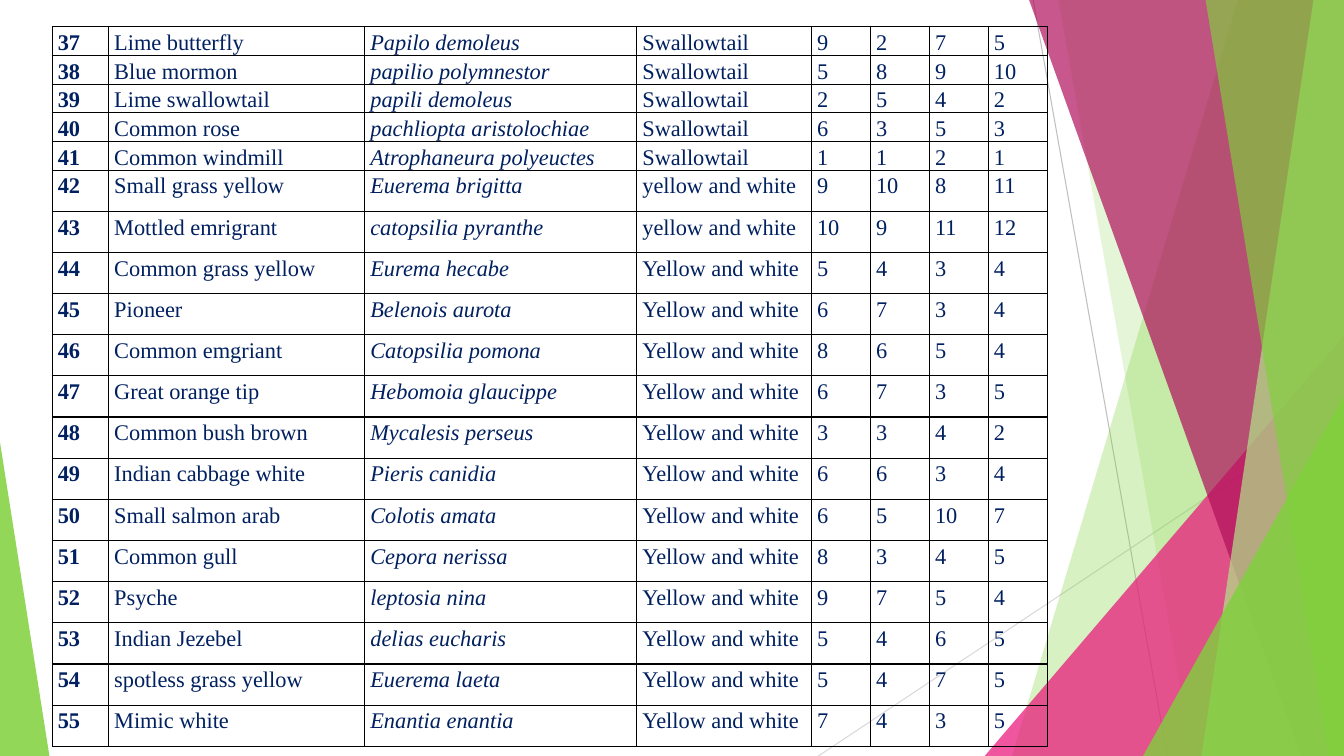
from lxml.etree import SubElement
from pptx import Presentation
from pptx.dml.color import RGBColor
from pptx.enum.shapes import MSO_CONNECTOR, MSO_SHAPE
from pptx.oxml import parse_xml
from pptx.oxml.ns import nsdecls, qn
from pptx.util import Pt

PAGE = (0, 0, 960, 540)
GRID = (37.3, 19.2, 711, 514)
WIDTHS = [40.3, 183, 194.3, 124.8] + [42.15] * 4
SHORT, TALL = 18.72, 29.4
FIRST = 37
FAMILIES = ["Swallowtail"] * 5 + ["yellow and white"] * 2 + ["Yellow and white"] * 12
SPECIES = [
    ("Lime butterfly", "Papilo demoleus", 9, 2, 7, 5),
    ("Blue mormon", "papilio polymnestor", 5, 8, 9, 10),
    ("Lime swallowtail", "papili demoleus", 2, 5, 4, 2),
    ("Common rose", "pachliopta aristolochiae", 6, 3, 5, 3),
    ("Common windmill", "Atrophaneura polyeuctes", 1, 1, 2, 1),
    ("Small grass yellow", "Euerema brigitta", 9, 10, 8, 11),
    ("Mottled emrigrant", "catopsilia pyranthe", 10, 9, 11, 12),
    ("Common grass yellow", "Eurema hecabe", 5, 4, 3, 4),
    ("Pioneer", "Belenois aurota", 6, 7, 3, 4),
    ("Common emgriant", "Catopsilia pomona", 8, 6, 5, 4),
    ("Great orange tip", "Hebomoia glaucippe", 6, 7, 3, 5),
    ("Common bush brown", "Mycalesis perseus", 3, 3, 4, 2),
    ("Indian cabbage white", "Pieris canidia", 6, 6, 3, 4),
    ("Small salmon arab", "Colotis amata", 6, 5, 10, 7),
    ("Common gull", "Cepora nerissa", 8, 3, 4, 5),
    ("Psyche", "leptosia nina", 9, 7, 5, 4),
    ("Indian Jezebel", "delias eucharis", 5, 4, 6, 5),
    ("spotless grass yellow", "Euerema laeta", 5, 4, 7, 5),
    ("Mimic white", "Enantia enantia", 7, 4, 3, 5),
]


def color(code):
    """Turn a hex string into a colour."""
    return RGBColor.from_string(code)


def apply(target, values):
    """Set each attribute named in a dict."""
    for name, value in values.items():
        setattr(target, name, value)


def paint(shape, code, percent):
    """Give a shape a see-through fill and no outline."""
    shape.shadow.inherit = False
    shape.line.fill.background()
    shape.fill.solid()
    shape.fill.fore_color.rgb = color(code)
    for tone in shape.element.spPr.iter(qn("a:srgbClr")):
        SubElement(tone, qn("a:alpha"), val=str(percent * 1000))


def add_ray(slide, box, start, end, code):
    """Draw a thin line between two points of the box."""
    left, top = box[:2]
    ray = slide.shapes.add_connector(
        MSO_CONNECTOR.STRAIGHT, Pt(left + start[0]), Pt(top + start[1]),
        Pt(left + end[0]), Pt(top + end[1]))
    ray.line.width = Pt(0.75)
    ray.line.color.rgb = color(code)
    SubElement(ray.element.spPr, qn("a:effectLst"))


def add_wedge(slide, box, head, foot, code, percent):
    """Fill the box from a slanted edge to its right side."""
    left, top, width, height = box
    right, base = Pt(left + width), Pt(top + height)
    pen = slide.shapes.build_freeform(Pt(left + head), Pt(top))
    pen.add_line_segments([(right, Pt(top)), (right, base), (Pt(left + foot), base)])
    paint(pen.convert_to_shape(), code, percent)


def add_peak(slide, box, left, rise, width, tip, code, percent):
    """Stand a right triangle on the base of the box."""
    peak = slide.shapes.add_shape(
        MSO_SHAPE.ISOSCELES_TRIANGLE, Pt(box[0] + left),
        Pt(box[1] + box[3] - rise), Pt(width), Pt(rise))
    peak.adjustments[0] = tip
    paint(peak, code, percent)


def add_facets(slide, box):
    """Draw the coloured facets behind the table."""
    add_ray(slide, box, (738, 0), (833.8, 540), "BFBFBF")
    add_ray(slide, box, (960, 290.2), (584.6, 540), "D9D9D9")
    add_wedge(slide, box, 884.2, 722.9, "7FD13B", 30)
    add_wedge(slide, box, 756, 851.8, "7FD13B", 20)
    add_peak(slide, box, 703.4, 300.2, 256.6, 1, "EA157A", 72)
    add_wedge(slide, box, 735.1, 929.5, "B0105C", 70)
    add_wedge(slide, box, 938.2, 858.2, "B2E389", 70)
    add_wedge(slide, box, 861.1, 949, "7FD13B", 65)
    add_peak(slide, box, 816.5, 257, 143.5, 1, "7FD13B", 80)
    add_peak(slide, box, 0, 224, 35.3, 0, "7FD13B", 85)


def add_edges(cell):
    """Rule all four sides of a cell in black."""
    props = cell._tc.get_or_add_tcPr()
    for place, side in enumerate("LRTB"):
        props.insert(place, parse_xml(
            f'<a:ln{side} {nsdecls("a")} w="12700"><a:solidFill>'
            f'<a:srgbClr val="000000"/></a:solidFill></a:ln{side}>'))


def fill_cell(cell, text, column):
    """Write one cell in the style of its column."""
    apply(cell, {"margin_left": Pt(4), "margin_right": Pt(4),
                 "margin_top": 0, "margin_bottom": 0})
    cell.fill.background()
    add_edges(cell)
    line = cell.text_frame.paragraphs[0]
    line.line_spacing = 1.15
    run = line.add_run()
    run.text = str(text)
    apply(run.font, {"name": "Times New Roman", "size": Pt(16),
                     "bold": column == 0, "italic": column == 2})
    run.font.color.rgb = color("002060")


def add_counts(slide, box):
    """Place the table of species and counts."""
    frame = slide.shapes.add_table(len(SPECIES), len(WIDTHS), *map(Pt, box))
    table = frame.table
    apply(table, {"first_row": False, "horz_banding": False})
    for column, width in zip(table.columns, WIDTHS):
        column.width = Pt(width)
    for index, (entry, kin) in enumerate(zip(SPECIES, FAMILIES)):
        row = table.rows[index]
        row.height = Pt(SHORT if kin == "Swallowtail" else TALL)
        texts = (FIRST + index, *entry[:2], kin, *entry[2:])
        for column, text in enumerate(texts):
            fill_cell(row.cells[column], text, column)


def main():
    """Build and save the slide."""
    deck = Presentation()
    apply(deck, {"slide_width": Pt(PAGE[2]), "slide_height": Pt(PAGE[3])})
    slide = deck.slides.add_slide(deck.slide_layouts[6])
    add_facets(slide, PAGE)
    add_counts(slide, GRID)
    deck.save("out.pptx")


if __name__ == "__main__":
    main()
